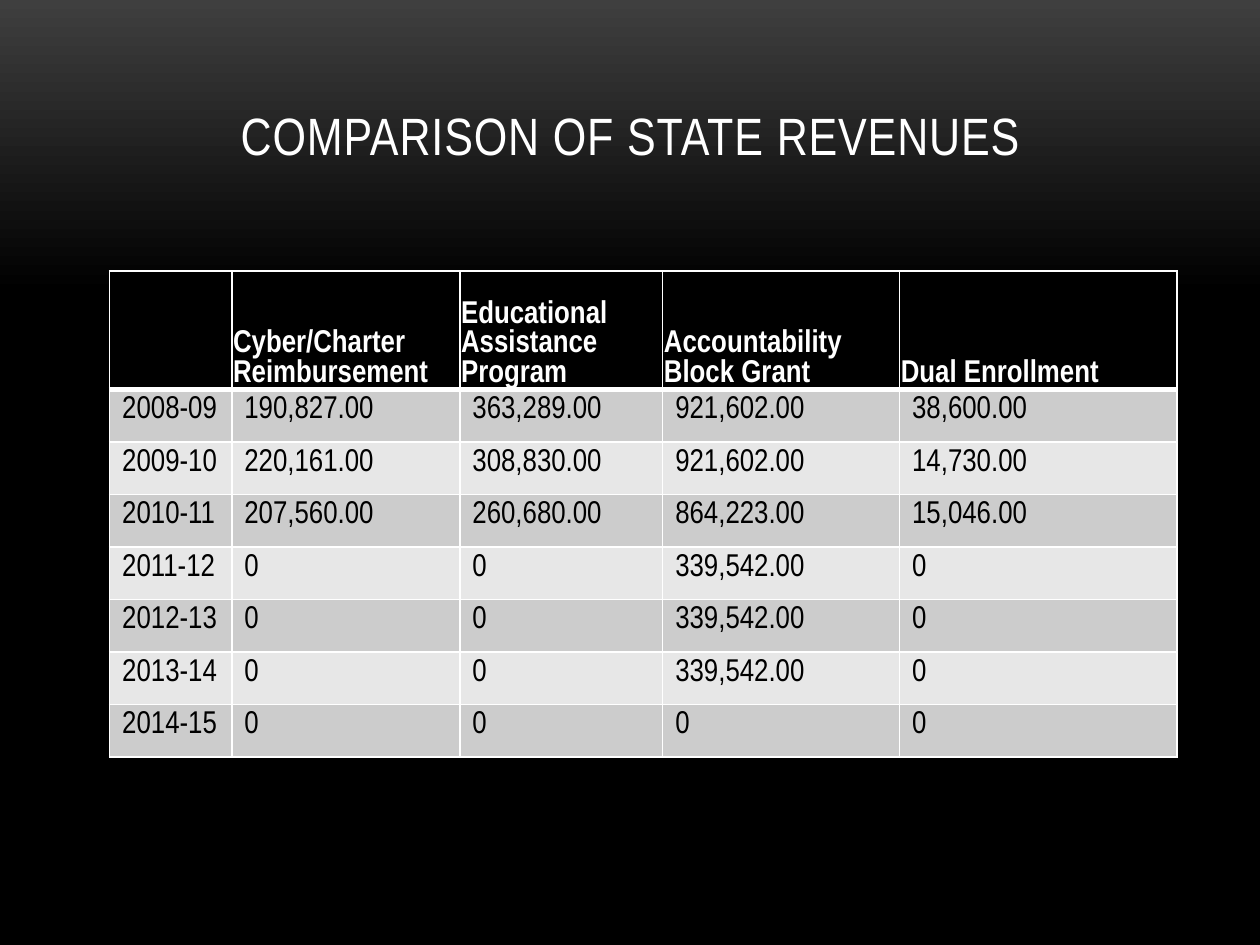
from lxml import etree
from pptx import Presentation
from pptx.dml.color import RGBColor
from pptx.enum.text import MSO_ANCHOR, PP_ALIGN
from pptx.oxml.ns import qn
from pptx.util import Inches, Pt

WHITE = RGBColor(0xFF, 0xFF, 0xFF)
BLACK = RGBColor(0, 0, 0)
CHARCOAL = RGBColor(0x3F, 0x3F, 0x3F)
BAND_DARK = RGBColor(0xCC, 0xCC, 0xCC)
BAND_LIGHT = RGBColor(0xE7, 0xE7, 0xE7)

HEADERS = ["", "Cyber/Charter Reimbursement", "Educational Assistance Program",
           "Accountability Block Grant", "Dual Enrollment"]
REVENUES = [
    ["2008-09", "190,827.00", "363,289.00", "921,602.00", "38,600.00"],
    ["2009-10", "220,161.00", "308,830.00", "921,602.00", "14,730.00"],
    ["2010-11", "207,560.00", "260,680.00", "864,223.00", "15,046.00"],
    ["2011-12", "0", "0", "339,542.00", "0"],
    ["2012-13", "0", "0", "339,542.00", "0"],
    ["2013-14", "0", "0", "339,542.00", "0"],
    ["2014-15", "0", "0", "0", "0"],
]
COL_WIDTHS = [0.97, 1.81, 1.61, 1.88, 2.2]
HEADER_HEIGHT = 0.94


def set_attrs(obj, values):
    for name, value in values.items():
        setattr(obj, name, value)


class SlideBuilder:
    font_name = "Arial Narrow"

    def __init__(self, slide):
        self.s = slide

    def background(self, top, bottom, end):
        fill = self.s.background.fill
        fill.gradient()
        fill.gradient_angle = 270
        for stop, color, position in zip(fill.gradient_stops, (top, bottom), (0, end)):
            stop.color.rgb = color
            stop.position = position

    def add_text(self, tf, text, size, color, bold=False):
        p = tf.paragraphs[0]
        r = p.add_run()
        r.text = text
        set_attrs(r.font, {"name": self.font_name, "size": Pt(size), "bold": bold})
        r.font.color.rgb = color
        return p, r

    def title(self, text, left, top, width, height):
        sp = self.s.shapes.title
        set_attrs(sp, {"left": Inches(left), "top": Inches(top),
                       "width": Inches(width), "height": Inches(height)})
        tf = sp.text_frame
        set_attrs(tf, {"word_wrap": True, "vertical_anchor": MSO_ANCHOR.BOTTOM})
        p, r = self.add_text(tf, text, 30, WHITE)
        p.alignment = PP_ALIGN.CENTER
        r._r.get_or_add_rPr().set("spc", "50")

    def borders(self, cell, bottom):
        """Draw white lines round a cell, the bottom one in its own width."""
        tcPr = cell._tc.get_or_add_tcPr()
        for side, width in {"L": 1, "R": 1, "T": 1, "B": bottom}.items():
            ln = etree.SubElement(tcPr, qn(f"a:ln{side}"), w=str(Pt(width)))
            solid = etree.SubElement(ln, qn("a:solidFill"))
            etree.SubElement(solid, qn("a:srgbClr"), val=str(WHITE))

    def cell(self, cell, text, fill, color, header):
        self.borders(cell, 3 if header else 1)
        cell.fill.solid()
        cell.fill.fore_color.rgb = fill
        if header:
            edge = Inches(0.01)
            set_attrs(cell, {"vertical_anchor": MSO_ANCHOR.BOTTOM, "margin_left": edge,
                             "margin_right": edge, "margin_top": edge, "margin_bottom": 0})
        if text:
            self.add_text(cell.text_frame, text, 18, color, header)

    def table(self, rows, left, top, height):
        frame = self.s.shapes.add_table(len(rows), len(COL_WIDTHS), Inches(left), Inches(top),
                                        Inches(sum(COL_WIDTHS)), Inches(height))
        table = frame.table
        for column, width in zip(table.columns, COL_WIDTHS):
            column.width = Inches(width)
        body_height = (height - HEADER_HEIGHT) / (len(rows) - 1)
        for i, row in enumerate(rows):
            header = i == 0
            table.rows[i].height = Inches(HEADER_HEIGHT if header else body_height)
            band = BAND_DARK if i % 2 else BAND_LIGHT
            fill, color = (BLACK, WHITE) if header else (band, BLACK)
            for j, text in enumerate(row):
                self.cell(table.cell(i, j), text, fill, color, header)


def main():
    prs = Presentation()
    set_attrs(prs, {"slide_width": Inches(10), "slide_height": Inches(7.5)})
    builder = SlideBuilder(prs.slides.add_slide(prs.slide_layouts[5]))
    builder.background(CHARCOAL, BLACK, 0.31)
    builder.title("COMPARISON OF STATE REVENUES", 0.67, 0.12, 8.67, 1.25)
    builder.table([HEADERS] + REVENUES, 0.87, 2.15, 3.86)
    prs.save("out.pptx")


if __name__ == "__main__":
    main()
